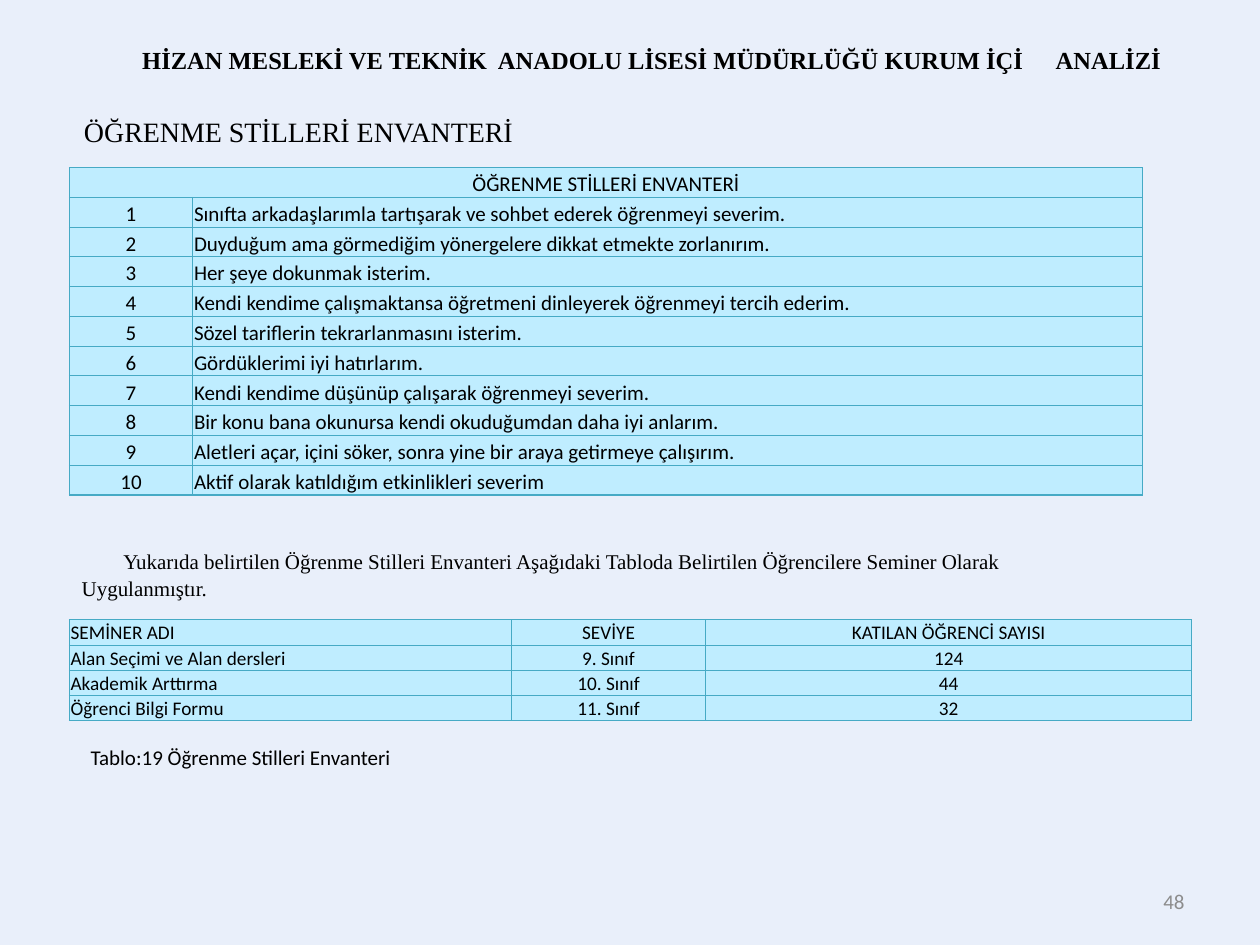
from dataclasses import dataclass

from lxml import etree
from pptx import Presentation
from pptx.dml.color import RGBColor
from pptx.enum.text import MSO_ANCHOR, PP_ALIGN
from pptx.oxml.ns import qn
from pptx.util import Inches, Pt

LEFT, MID, RIGHT, JUST = (
    PP_ALIGN.LEFT, PP_ALIGN.CENTER, PP_ALIGN.RIGHT, PP_ALIGN.JUSTIFY)
TOP, CENTRE, BOTTOM = MSO_ANCHOR.TOP, MSO_ANCHOR.MIDDLE, MSO_ANCHOR.BOTTOM
SANS, SERIF = "Calibri", "Times New Roman"
BLACK, GREY, PAPER, CELL, EDGE = "000000", "8C8C8C", "E9EFFA", "BFEDFF", "46AAC5"


@dataclass
class Label:
    text: str
    box: tuple
    size: float
    font: str = SANS
    color: str = BLACK
    bold: bool = False
    align: PP_ALIGN = LEFT
    anchor: MSO_ANCHOR = TOP
    wrap: bool = True
    indent: float = 0
    tab: float = 0
    pitch: float = 0
    top: float = 0.05
    right: float = 0.1


@dataclass
class Grid:
    rows: list
    left: float
    top: float
    height: float
    cols: list
    aligns: list
    size: float


LABELS = [
    Label("48", (7.17, 6.95, 2.33, 0.4), 12, color=GREY, align=RIGHT, anchor=CENTRE),
    Label("HİZAN MESLEKİ VE TEKNİK  ANADOLU LİSESİ MÜDÜRLÜĞÜ KURUM İÇİ\tANALİZİ",
          (0.78, 0.31, 8.59, 0.34), 14, SERIF, bold=True, align=JUST,
          indent=0.25, tab=7.48),
    Label("ÖĞRENME STİLLERİ ENVANTERİ", (0.55, 0.86, 3.64, 0.37), 16, SERIF,
          align=MID, wrap=False),
    Label("Yukarıda belirtilen Öğrenme Stilleri Envanteri Aşağıdaki Tabloda "
          "Belirtilen Öğrencilere Seminer Olarak Uygulanmıştır.",
          (0.55, 4.22, 8.52, 0.61), 12, SERIF, indent=0.33, pitch=15.5,
          top=0.12, right=0.2),
    Label("Tablo:19 Öğrenme Stilleri Envanteri", (0.62, 5.86, 2.61, 0.3), 12, wrap=False),
]

HABITS = [
    "Sınıfta arkadaşlarımla tartışarak ve sohbet ederek öğrenmeyi severim.",
    "Duyduğum ama görmediğim yönergelere dikkat etmekte zorlanırım.",
    "Her şeye dokunmak isterim.",
    "Kendi kendime çalışmaktansa öğretmeni dinleyerek öğrenmeyi tercih ederim.",
    "Sözel tariflerin tekrarlanmasını isterim.",
    "Gördüklerimi iyi hatırlarım.",
    "Kendi kendime düşünüp çalışarak öğrenmeyi severim.",
    "Bir konu bana okunursa kendi okuduğumdan daha iyi anlarım.",
    "Aletleri açar, içini söker, sonra yine bir araya getirmeye çalışırım.",
    "Aktif olarak katıldığım etkinlikleri severim",
]
STYLES = Grid(
    [("ÖĞRENME STİLLERİ ENVANTERİ",)]
    + [(str(n), habit) for n, habit in enumerate(HABITS, 1)],
    0.55, 1.33, 2.6, [0.98, 7.54], [MID, LEFT], 12)
TALKS = Grid(
    [("SEMİNER ADI", "SEVİYE", "KATILAN ÖĞRENCİ SAYISI"),
     ("Alan Seçimi ve Alan dersleri", "9. Sınıf", "124"),
     ("Akademik Arttırma", "10. Sınıf", "44"),
     ("Öğrenci Bilgi Formu", "11. Sınıf", "32")],
    0.55, 4.92, 0.8, [3.51, 1.54, 3.86], [LEFT, MID, MID], 11)


def paint(fill, color: str) -> None:
    fill.solid()
    fill.fore_color.rgb = RGBColor.from_string(color)


def style(item, values: dict) -> None:
    for name, value in values.items():
        setattr(item, name, value)


def write(para, text: str, size: float, font: str = SANS,
          color: str = BLACK, bold: bool = False) -> None:
    run = para.add_run()
    run.text = text
    style(run.font, {"size": Pt(size), "name": font, "bold": bold})
    paint(run.font.fill, color)


def add_label(slide, label: Label) -> None:
    frame = slide.shapes.add_textbox(*map(Inches, label.box)).text_frame
    style(frame, {"word_wrap": label.wrap, "vertical_anchor": label.anchor,
                  "margin_top": Inches(label.top),
                  "margin_right": Inches(label.right)})
    para = frame.paragraphs[0]
    para.alignment = label.align
    if label.pitch:
        para.line_spacing = Pt(label.pitch)
    props = para._p.get_or_add_pPr()
    if label.indent:
        props.set("indent", str(Inches(label.indent)))
    if label.tab:
        stops = etree.SubElement(props, qn("a:tabLst"))
        etree.SubElement(stops, qn("a:tab"), pos=str(Inches(label.tab)), algn="l")
    write(para, label.text, label.size, label.font, label.color, label.bold)


def edge(cell) -> None:
    """Draw a thin line on all four sides of the cell."""
    props = cell._tc.get_or_add_tcPr()
    for side in ("lnL", "lnR", "lnT", "lnB"):
        line = etree.SubElement(props, qn(f"a:{side}"), w=str(Pt(0.75)))
        fill = etree.SubElement(line, qn("a:solidFill"))
        etree.SubElement(fill, qn("a:srgbClr"), val=EDGE)


def add_grid(slide, grid: Grid) -> None:
    table = slide.shapes.add_table(
        len(grid.rows), len(grid.cols), Inches(grid.left), Inches(grid.top),
        Inches(sum(grid.cols)), Inches(grid.height)).table
    style(table, {"first_row": False, "horz_banding": False})
    for col, width in zip(table.columns, grid.cols):
        col.width = Inches(width)
    for cell in table.iter_cells():
        style(cell, {"margin_left": Inches(0.01), "margin_right": Inches(0.01),
                     "margin_top": Inches(0.01), "margin_bottom": 0,
                     "vertical_anchor": BOTTOM})
        edge(cell)
        paint(cell.fill, CELL)
    for r, row in enumerate(grid.rows):
        if len(row) == 1:
            table.cell(r, 0).merge(table.cell(r, len(grid.cols) - 1))
        for c, text in enumerate(row):
            para = table.cell(r, c).text_frame.paragraphs[0]
            para.alignment = grid.aligns[c]
            write(para, text, grid.size)


def main() -> None:
    deck = Presentation()
    style(deck, {"slide_width": Inches(10), "slide_height": Inches(7.5)})
    slide = deck.slides.add_slide(deck.slide_layouts[6])
    paint(slide.background.fill, PAPER)
    for label in LABELS:
        add_label(slide, label)
    for grid in (STYLES, TALKS):
        add_grid(slide, grid)
    deck.save("out.pptx")


if __name__ == "__main__":
    main()
